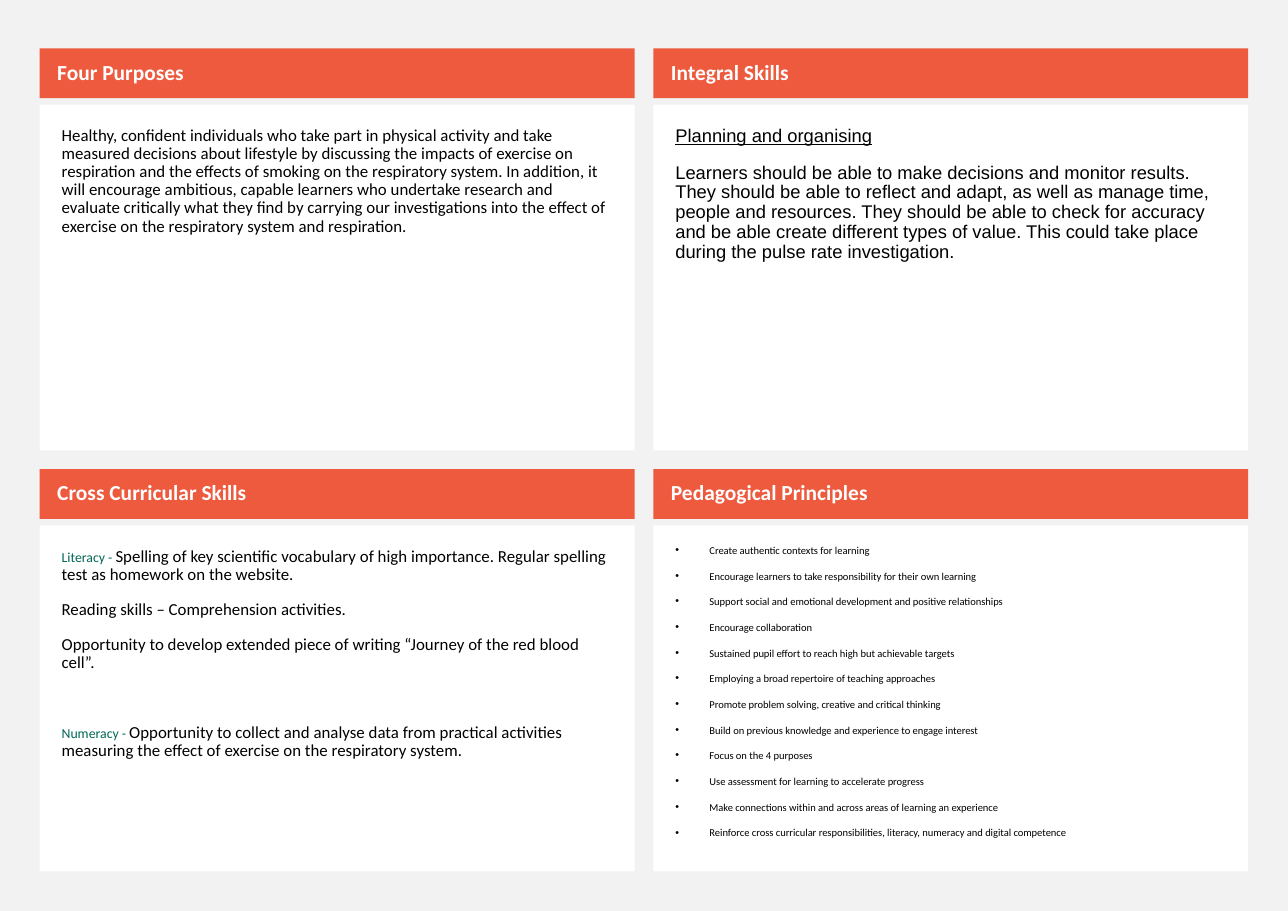
"""Build a lesson overview page with four headed panels."""
from dataclasses import dataclass

from lxml.etree import SubElement
from pptx import Presentation
from pptx.dml.color import RGBColor
from pptx.enum.shapes import MSO_SHAPE as Shape
from pptx.enum.text import MSO_ANCHOR as Anchor, PP_ALIGN as Align
from pptx.oxml.ns import qn
from pptx.util import Inches, Pt

ORANGE, WHITE, GREY, BLACK, GREEN = "ED5A3E", "FFFFFF", "F2F2F2", "000000", "006758"
LEFT, TOP = 0.36, 0.44
COLUMN_STEP, ROW_STEP = 5.57, 3.82
PANEL_WIDTH, HEADING_HEIGHT, BODY_HEIGHT, BODY_OFFSET = 5.4, 0.45, 3.14, 0.51
BULLET_INDENT = 0.31
HEADING_INSETS = (0.16, 0.05, 0.1, 0.05)
BODY_INSETS = (0.2, 0.2, 0.2, 0.2)


@dataclass(frozen=True)
class Span:
    text: str
    size: float = 11
    color: str = BLACK
    font: str = "Calibri"
    bold: bool = False
    underline: bool = False


@dataclass(frozen=True)
class Para:
    spans: tuple[Span, ...]
    space_before: float = 11
    line_spacing: float = 0.9
    bullet: bool = False


@dataclass(frozen=True)
class Panel:
    heading: str
    paras: tuple[Para, ...]


PRINCIPLES = (
    "Create authentic contexts for learning",
    "Encourage learners to take responsibility for their own learning",
    "Support social and emotional development and positive relationships",
    "Encourage collaboration",
    "Sustained pupil effort to reach high but achievable targets",
    "Employing a broad repertoire of teaching approaches",
    "Promote problem solving, creative and critical thinking",
    "Build on previous knowledge and experience to engage interest",
    "Focus on the 4 purposes",
    "Use assessment for learning to accelerate progress",
    "Make connections within and across areas of learning an experience",
    "Reinforce cross curricular responsibilities, literacy, numeracy and digital competence",
)

PANELS = (
    Panel("Four Purposes", (
        Para((Span(
            "Healthy, confident individuals who take part in physical activity and take "
            "measured decisions about lifestyle by discussing the impacts of exercise on "
            "respiration and the effects of smoking on the respiratory system. In addition, it "
            "will encourage ambitious, capable learners who undertake research and evaluate "
            "critically what they find by carrying our investigations into the effect of "
            "exercise on the respiratory system and respiration."),)),
    )),
    Panel("Integral Skills", (
        Para((Span("Planning and organising", 12, font="Arial", underline=True),)),
        Para((Span(
            "Learners should be able to make decisions and monitor results. They should be able "
            "to reflect and adapt, as well as manage time, people and resources. They should be "
            "able to check for accuracy and be able create different types of value. This could "
            "take place during the pulse rate investigation.", 12, font="Arial"),)),
    )),
    Panel("Cross Curricular Skills", (
        Para((Span("Literacy - ", 9, GREEN), Span(
            "Spelling of key scientific vocabulary of high importance. Regular spelling test "
            "as homework on the website."))),
        Para((Span("Reading skills – Comprehension activities."),)),
        Para((Span("Opportunity to develop extended piece of writing “Journey of the red "
                   "blood cell”."),)),
        Para((Span("Numeracy - ", 9, GREEN), Span(
            "Opportunity to collect and analyse data from practical activities measuring the "
            "effect of exercise on the respiratory system.")), space_before=34),
    )),
    Panel("Pedagogical Principles", tuple(
        Para((Span(principle, 6.9),), line_spacing=0.7, bullet=True)
        for principle in PRINCIPLES)),
)


def set_fill(fill_format, color: str) -> None:
    fill_format.solid()
    fill_format.fore_color.rgb = RGBColor.from_string(color)


def add_bullet(paragraph) -> None:
    properties = paragraph._p.get_or_add_pPr()
    properties.set("marL", str(Inches(BULLET_INDENT)))
    properties.set("indent", str(-Inches(BULLET_INDENT)))
    SubElement(properties, qn("a:buFont")).set("typeface", "Arial")
    SubElement(properties, qn("a:buChar")).set("char", "•")


def write_para(paragraph, para: Para) -> None:
    paragraph.alignment = Align.LEFT
    paragraph.line_spacing = para.line_spacing
    paragraph.space_before = Pt(para.space_before)
    if para.bullet:
        add_bullet(paragraph)
    for span in para.spans:
        run = paragraph.add_run()
        run.text = span.text
        run.font.name = span.font
        run.font.size = Pt(span.size)
        run.font.bold = span.bold
        run.font.underline = span.underline
        set_fill(run.font.fill, span.color)


def add_box(page, left: float, top: float, height: float, color: str,
            insets: tuple[float, ...], anchor: Anchor, paras: tuple[Para, ...]) -> None:
    box = page.shapes.add_shape(Shape.RECTANGLE, Inches(left), Inches(top),
                                Inches(PANEL_WIDTH), Inches(height))
    box.shadow.inherit = False
    box.line.fill.background()
    set_fill(box.fill, color)
    frame = box.text_frame
    frame.word_wrap = True
    frame.vertical_anchor = anchor
    (frame.margin_left, frame.margin_top,
     frame.margin_right, frame.margin_bottom) = map(Inches, insets)
    for index, para in enumerate(paras):
        write_para(frame.add_paragraph() if index else frame.paragraphs[0], para)


def add_panel(page, panel: Panel, left: float, top: float) -> None:
    heading = Para((Span(panel.heading, 14, WHITE, bold=True),))
    add_box(page, left, top, HEADING_HEIGHT, ORANGE, HEADING_INSETS, Anchor.MIDDLE, (heading,))
    add_box(page, left, top + BODY_OFFSET, BODY_HEIGHT, WHITE, BODY_INSETS, Anchor.TOP,
            panel.paras)


def main() -> None:
    deck = Presentation()
    deck.slide_width, deck.slide_height = Inches(11.69), Inches(8.27)
    page = deck.slides.add_slide(deck.slide_layouts[6])
    set_fill(page.background.fill, GREY)
    for index, panel in enumerate(PANELS):
        row, column = divmod(index, 2)
        add_panel(page, panel, LEFT + column * COLUMN_STEP, TOP + row * ROW_STEP)
    deck.save("out.pptx")


if __name__ == "__main__":
    main()
